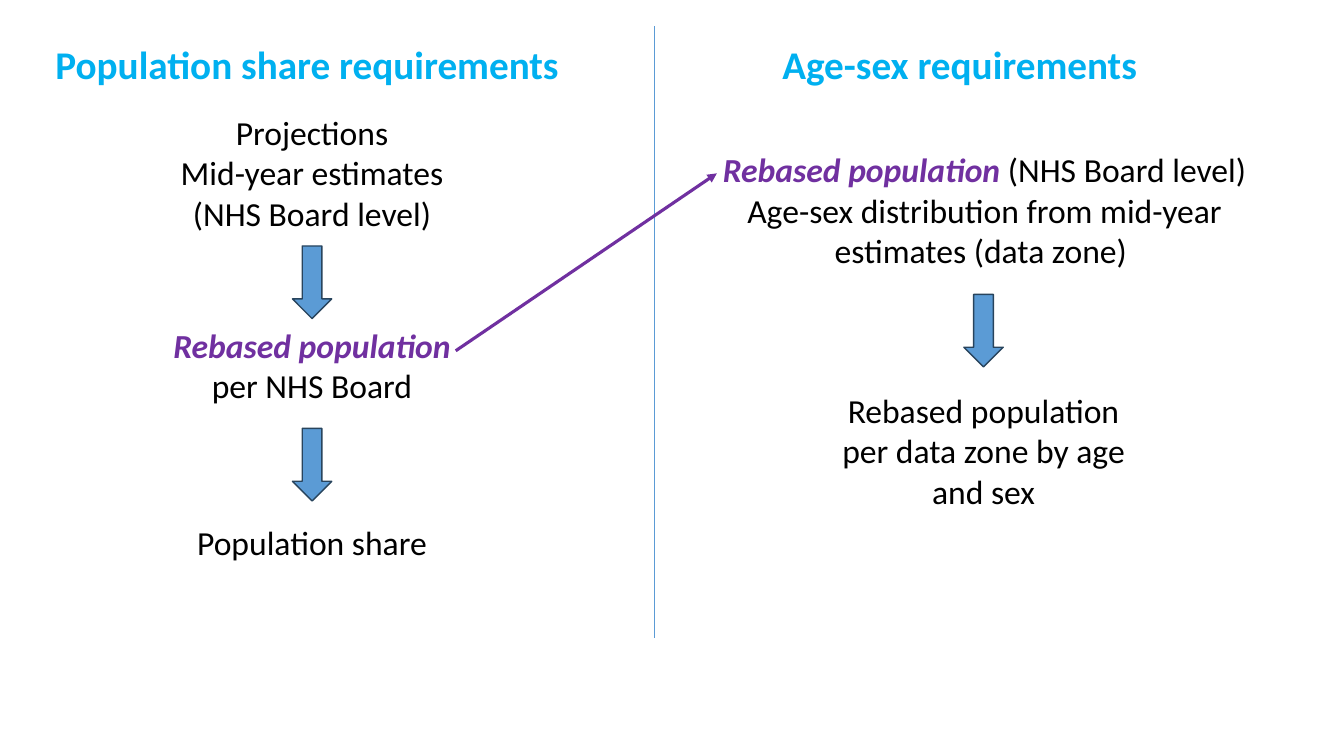
from lxml import etree
from pptx import Presentation
from pptx.dml.color import RGBColor
from pptx.enum.shapes import MSO_CONNECTOR, MSO_SHAPE
from pptx.enum.text import MSO_ANCHOR, MSO_AUTO_SIZE, PP_ALIGN
from pptx.oxml.ns import qn
from pptx.util import Inches, Pt

STRAIGHT = MSO_CONNECTOR.STRAIGHT
DOWN_ARROW = MSO_SHAPE.DOWN_ARROW
TOP = MSO_ANCHOR.TOP
NO_AUTOFIT = MSO_AUTO_SIZE.NONE
LEFT, CENTER = PP_ALIGN.LEFT, PP_ALIGN.CENTER
FONT = "Calibri"
CYAN, PURPLE, BLACK = "00B0F0", "7030A0", "000000"
BLUE, DARK_BLUE = "5B9BD5", "28445D"


def rgb(value):
    return RGBColor.from_string(value)


def add_line(start, end, color, width):
    line = s.shapes.add_connector(STRAIGHT, *[Inches(v) for v in start + end])
    line.line.color.rgb = rgb(color)
    line.line.width = Pt(width)
    etree.SubElement(line._element.spPr, qn("a:effectLst"))
    return line


prs = Presentation()
prs.slide_width = Inches(13.33)
prs.slide_height = Inches(7.5)
s = prs.slides.add_slide(prs.slide_layouts.get_by_name("Comparison"))

headings = {
    1: ("Population share requirements", 0.45, 5.8),
    3: ("Age-sex requirements", 7.66, 4.21),
}
for sp in list(s.placeholders):
    idx = sp.placeholder_format.idx
    if idx not in headings:
        sp._element.getparent().remove(sp._element)
        continue
    text, left, width = headings[idx]
    sp.left, sp.top = Inches(left), Inches(0.35)
    sp.width, sp.height = Inches(width), Inches(0.57)
    tf = sp.text_frame
    tf.text = text
    tf.word_wrap = True
    tf.auto_size = NO_AUTOFIT
    tf.vertical_anchor = TOP
    p = tf.paragraphs[0]
    p.alignment = LEFT
    p.space_before = Pt(0)
    p.space_after = Pt(6)
    p.font.name = FONT
    p.font.size = Pt(28)
    p.font.bold = True
    p.font.color.rgb = rgb(CYAN)

REBASED = "Rebased population "
steps = [
    (1.56, 1.06, 3.07, 1.31,
     [["Projections"], ["Mid-year estimates"], ["(NHS Board level)"]]),
    (1.56, 3.17, 3.07, 0.91, [[REBASED, "per NHS Board"]]),
    (1.56, 5.13, 3.07, 0.5, [["Population share"]]),
    (6.85, 1.43, 5.83, 1.72,
     [[REBASED, "(NHS Board level)"],
      ["Age-sex distribution from mid-year estimates (data zone) "]]),
    (8.22, 3.82, 3.07, 1.31,
     [["Rebased population per data zone by age and sex"]]),
]
for left, top, width, height, paragraphs in steps:
    sp = s.shapes.add_textbox(
        Inches(left), Inches(top), Inches(width), Inches(height))
    tf = sp.text_frame
    tf.word_wrap = True
    for i, runs in enumerate(paragraphs):
        p = tf.add_paragraph() if i else tf.paragraphs[0]
        p.alignment = CENTER
        p.font.name = FONT
        p.font.size = Pt(24)
        for text in runs:
            r = p.add_run()
            r.text = text
            highlighted = text == REBASED
            r.font.bold = r.font.italic = highlighted
            r.font.color.rgb = rgb(PURPLE if highlighted else BLACK)

for left, top in [(2.9, 2.44), (2.9, 4.25), (9.56, 2.92)]:
    sp = s.shapes.add_shape(
        DOWN_ARROW, Inches(left), Inches(top), Inches(0.39), Inches(0.72))
    sp.shadow.inherit = False
    sp.fill.solid()
    sp.fill.fore_color.rgb = rgb(BLUE)
    sp.line.color.rgb = rgb(DARK_BLUE)
    sp.line.width = Pt(1)

add_line((6.49, 0.26), (6.49, 6.33), BLUE, 0.5)
link = add_line((4.52, 3.48), (7.11, 1.72), PURPLE, 2.25)
etree.SubElement(link.line._get_or_add_ln(), qn("a:tailEnd"), type="triangle")

prs.save("out.pptx")
